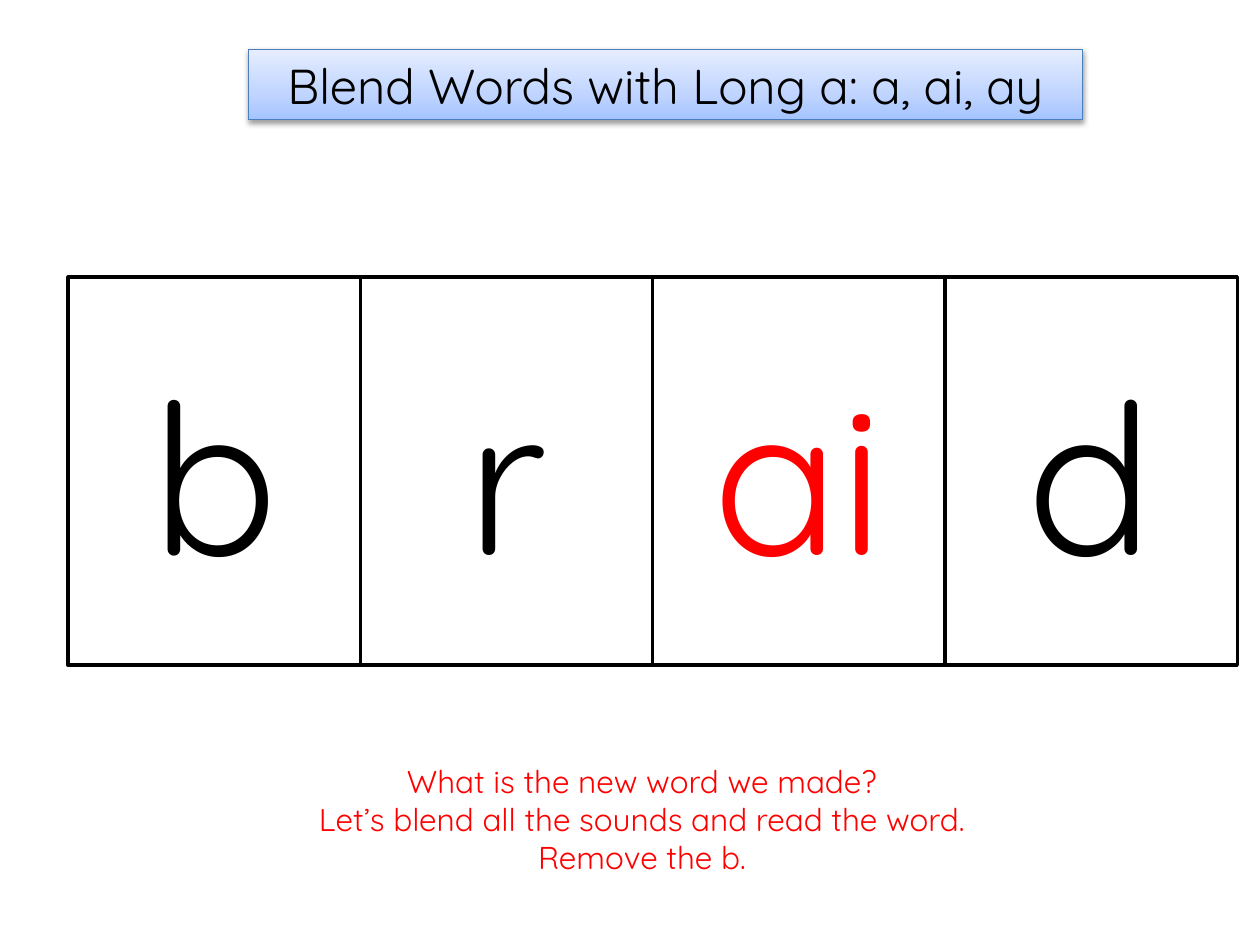
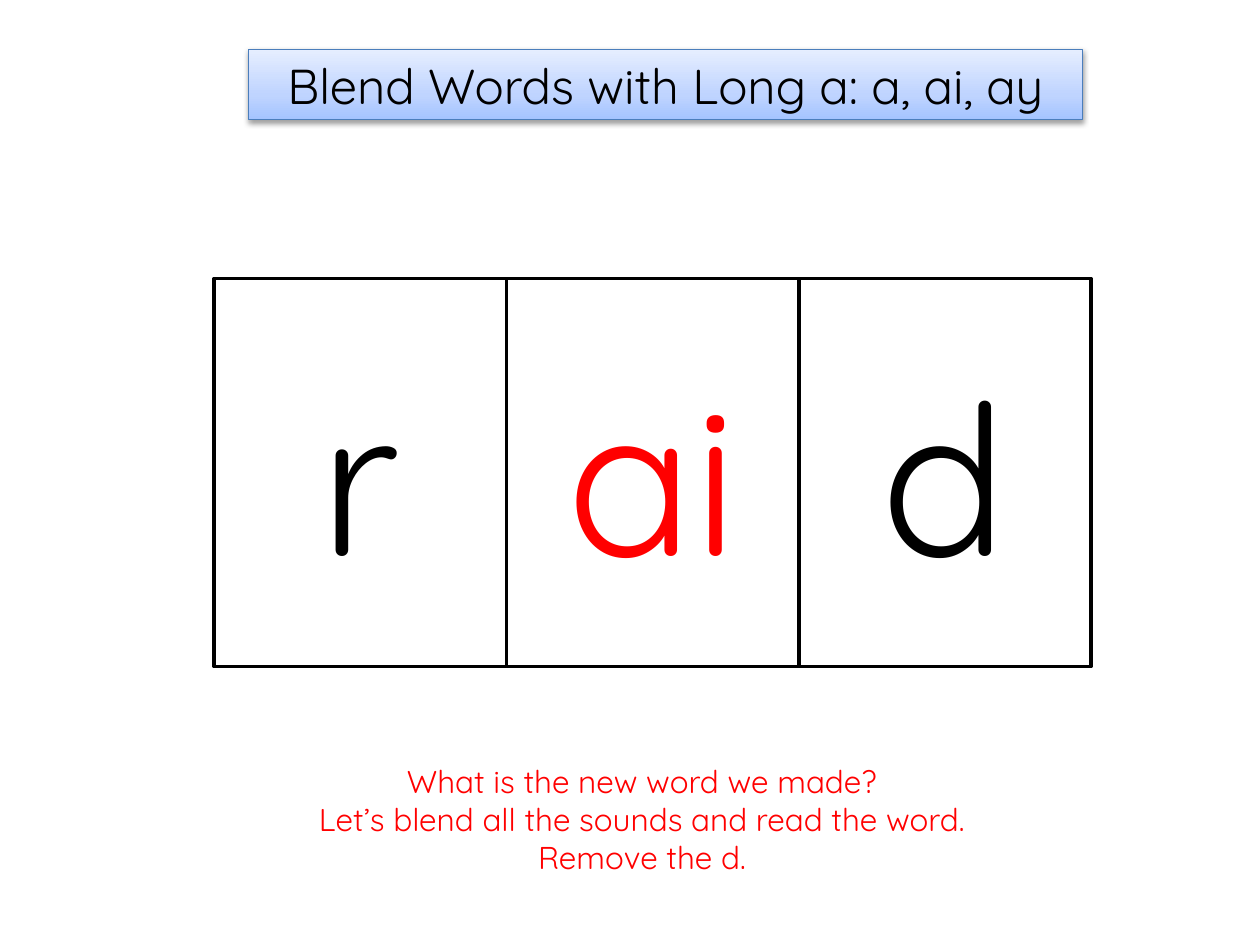
from copy import deepcopy

from lxml import etree
from pptx import Presentation
from pptx.dml.color import RGBColor
from pptx.enum.shapes import MSO_SHAPE
from pptx.enum.text import MSO_ANCHOR, MSO_AUTO_SIZE, PP_ALIGN
from pptx.oxml import parse_xml
from pptx.oxml.ns import qn
from pptx.util import Inches, Pt

RECT = MSO_SHAPE.RECTANGLE
MIDDLE = MSO_ANCHOR.MIDDLE
CENTER = PP_ALIGN.CENTER
NO_FIT = MSO_AUTO_SIZE.NONE
GROW = MSO_AUTO_SIZE.SHAPE_TO_FIT_TEXT

BLACK = RGBColor(0x00, 0x00, 0x00)
WHITE = RGBColor(0xFF, 0xFF, 0xFF)
RED = RGBColor(0xFF, 0x00, 0x00)
EDGE = RGBColor(0x4B, 0x7E, 0xBC)
STOPS = [
    (0, RGBColor(0xA4, 0xC4, 0xFF)),
    (0.35, RGBColor(0xBF, 0xD4, 0xFF)),
    (1, RGBColor(0xE6, 0xEE, 0xFF)),
]

FONT = "Quicksand"
TITLE = "Blend Words with Long a: a, ai, ay"
ASK = ["What is the new word we made?",
       "Let’s blend all the sounds and read the word."]
VOWEL = "ai"

# Boxes: left, top, width, height in inches
TITLE_BOX = (1.97, 0.39, 6.62, 0.56)
ASK_BOX = (1.61, 6, 6.97, 1.01)
CARD_W, CARD_H = 2.32, 3.08

# Sounds, left and top of the card row, sound to remove
WORDS = [
    (["b", "r", VOWEL, "d"], 0.54, 2.2, "b"),
    (["r", VOWEL, "d"], 1.7, 2.21, "d"),
]

SHADOW = (
    '<a:effectLst xmlns:a="http://schemas.openxmlformats.org/drawingml/2006/main">'
    '<a:outerShdw blurRad="40000" dist="20000" dir="5400000" rotWithShape="0">'
    '<a:srgbClr val="000000"><a:alpha val="38000"/></a:srgbClr>'
    '</a:outerShdw></a:effectLst>'
)


def write(shape, lines, size, color):
    """Put centred lines of text into a shape."""
    frame = shape.text_frame
    frame.word_wrap = True
    for i, line in enumerate(lines):
        para = frame.add_paragraph() if i else frame.paragraphs[0]
        para.alignment = CENTER
        run = para.add_run()
        run.text = line
        run.font.name = FONT
        run.font.size = Pt(size)
        run.font.color.rgb = color
    return frame


def add_title(slide, box):
    """Title band with a gradient and a soft shadow."""
    band = slide.shapes.title
    band.left, band.top, band.width, band.height = map(Inches, box)
    fill = band.fill
    fill.gradient()
    fill.gradient_angle = 90
    props = band.element.spPr
    stops = props.find(".//" + qn("a:gsLst"))
    stops.insert(1, deepcopy(stops[0]))
    for stop, (place, color) in zip(fill.gradient_stops, STOPS):
        stop.position = place
        stop.color.rgb = color
    band.line.color.rgb = EDGE
    band.line.width = Pt(0.75)
    props.append(parse_xml(etree.fromstring(SHADOW) is not None and SHADOW))
    frame = write(band, [TITLE], 28, BLACK)
    frame.vertical_anchor = MIDDLE
    frame.auto_size = NO_FIT


def add_cards(slide, sounds, left, top):
    """Row of touching cards, one sound each."""
    for i, sound in enumerate(sounds):
        box = (left + i * CARD_W, top, CARD_W, CARD_H)
        card = slide.shapes.add_shape(RECT, *map(Inches, box))
        card.shadow.inherit = False
        card.fill.solid()
        card.fill.fore_color.rgb = WHITE
        card.line.color.rgb = BLACK
        card.line.width = Pt(2)
        color = RED if sound == VOWEL else BLACK
        write(card, [sound], 120, color).vertical_anchor = MIDDLE


def add_ask(slide, box, drop):
    """Teacher's prompt below the cards."""
    note = slide.shapes.add_textbox(*map(Inches, box))
    frame = write(note, ASK + [f"Remove the {drop}."], 18, RED)
    frame.auto_size = GROW


def add_word(deck, sounds, left, top, drop):
    """One blending slide."""
    slide = deck.slides.add_slide(deck.slide_layouts[5])
    add_title(slide, TITLE_BOX)
    add_cards(slide, sounds, left, top)
    add_ask(slide, ASK_BOX, drop)


def main():
    deck = Presentation()
    deck.slide_width, deck.slide_height = Inches(10), Inches(7.5)
    for word in WORDS:
        add_word(deck, *word)
    deck.save("out.pptx")


if __name__ == "__main__":
    main()
